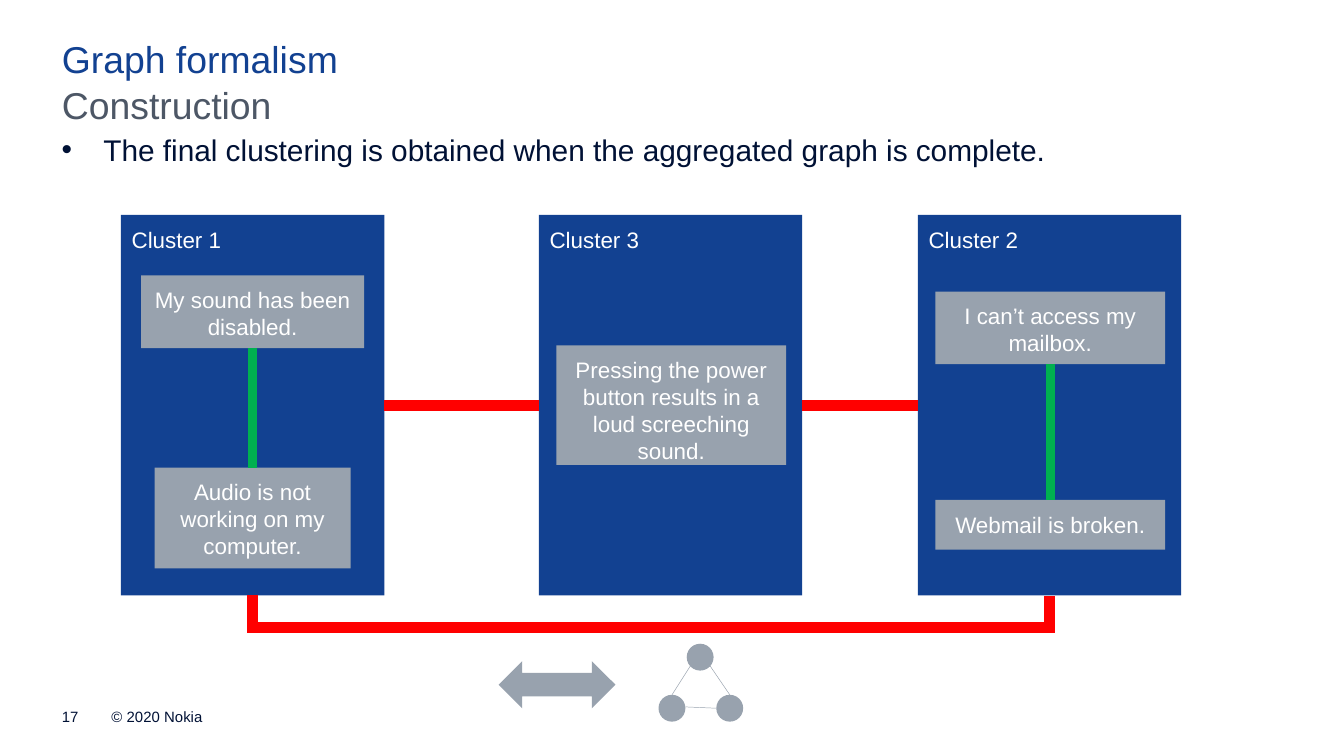
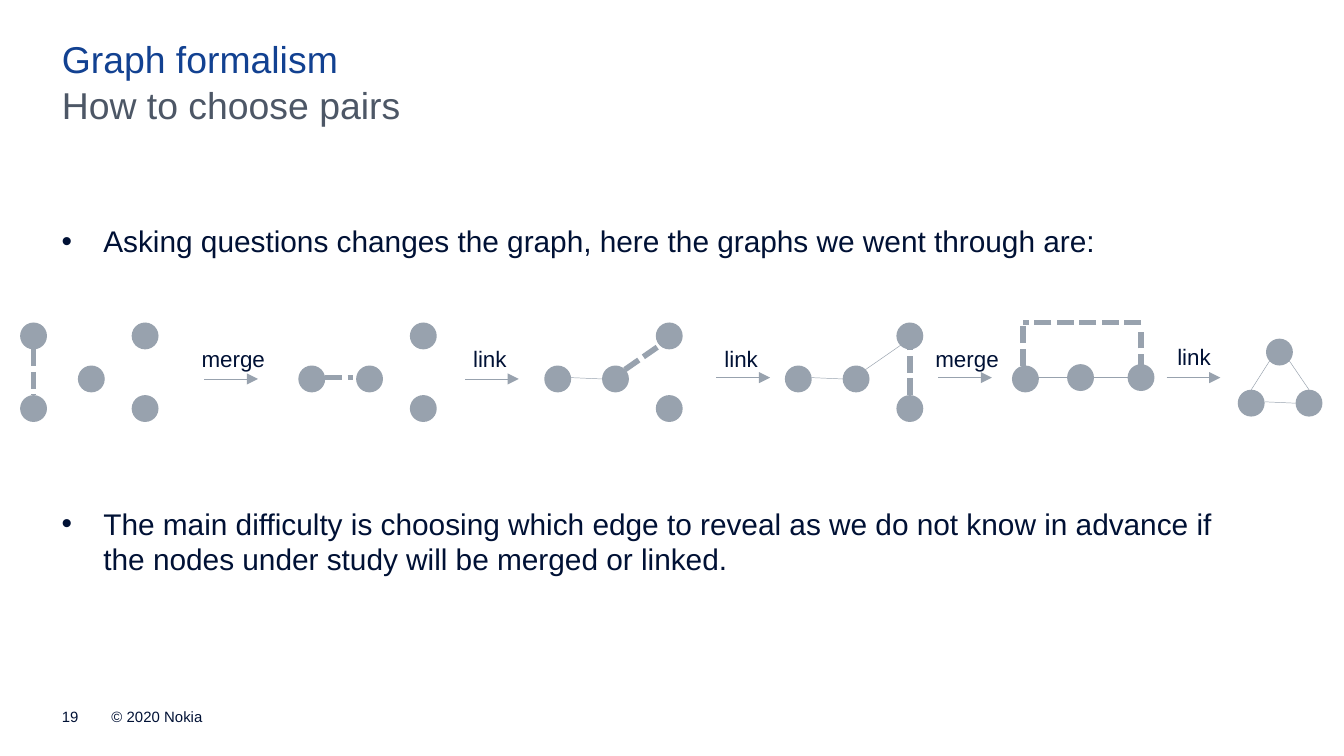
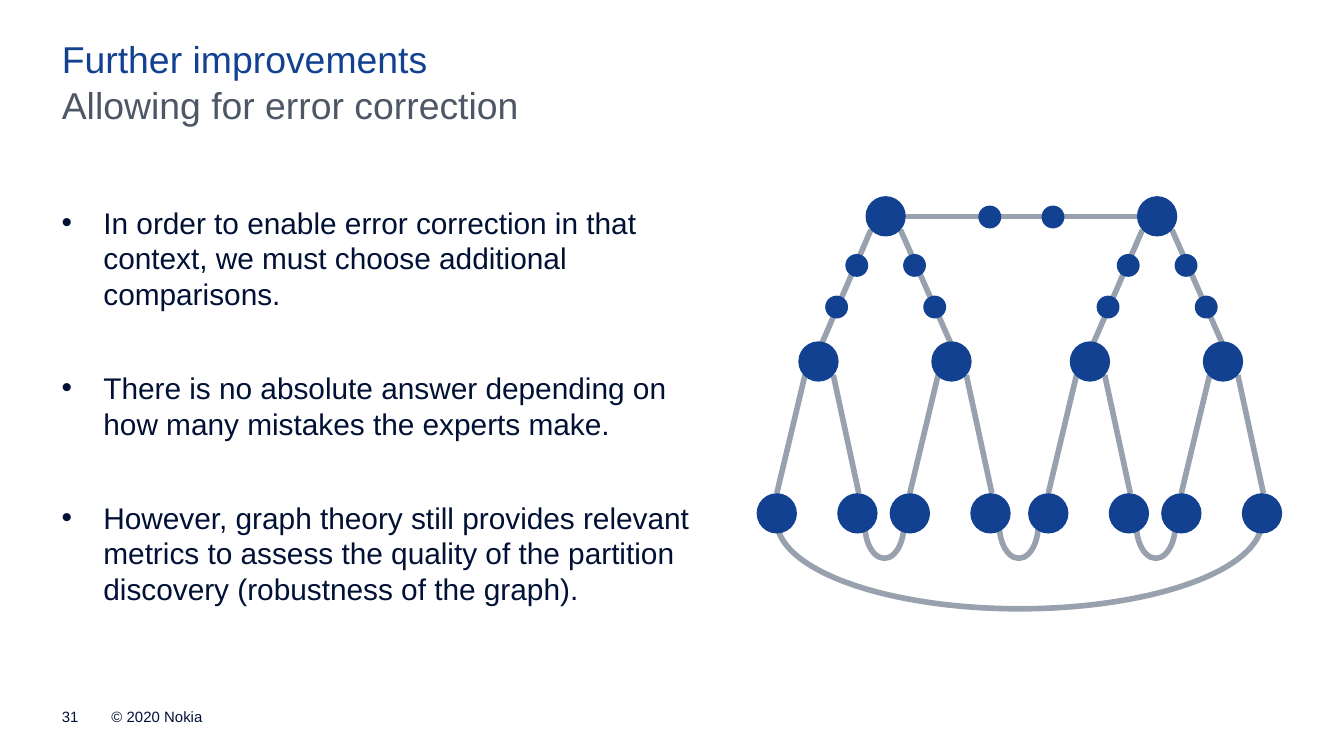
from dataclasses import dataclass

from lxml import etree
from pptx import Presentation
from pptx import util as u
from pptx.dml.color import RGBColor
from pptx.enum import dml, shapes, text
from pptx.oxml.ns import qn


@dataclass(frozen=True)
class Theme:
    font: str = "Arial"
    navy: str = "001135"
    blue: str = "124191"
    slate: str = "4D5766"
    grey: str = "98A2AE"
    white: str = "FFFFFF"
    link: str = "FF0000"
    merge: str = "00B050"
    title_size: float = 20
    body_size: float = 16
    label_size: float = 12
    footer_size: float = 8
    hairline: float = 0.25
    edge: float = 3
    merge_width: float = 4.5
    link_width: float = 6


THEME = Theme()
NODE = 0.2
CLUSTER_NODE = 0.3
MIDPOINT = 0.17
BOTTOM, TOP, LEFT, RIGHT = 2, 0, 1, 3


def add_bullet(paragraph, indent=0.31):
    properties = paragraph._p.get_or_add_pPr()
    properties.set("marL", str(u.Inches(indent)))
    properties.set("indent", str(u.Inches(-indent)))
    etree.SubElement(properties, qn("a:buFont")).set("typeface", THEME.font)
    etree.SubElement(properties, qn("a:buChar")).set("char", "•")


def write_text(frame, content, size, color, inset=0, align=text.PP_ALIGN.LEFT,
               anchor=text.MSO_ANCHOR.TOP, wrap=True, after=0, gap=0,
               line_spacing=None, bullet=False):
    frame.word_wrap = wrap
    frame.auto_size = text.MSO_AUTO_SIZE.NONE
    frame.vertical_anchor = anchor
    frame.margin_left = frame.margin_right = u.Inches(inset)
    frame.margin_top = frame.margin_bottom = u.Inches(inset)
    lines = [content] if isinstance(content, str) else content
    for index, line in enumerate(lines):
        paragraph = frame.add_paragraph() if index else frame.paragraphs[0]
        paragraph.text = line
        if bullet:
            add_bullet(paragraph)
        paragraph.alignment = align
        paragraph.space_before = u.Pt(gap if index else 0)
        paragraph.space_after = u.Pt(after)
        if line_spacing:
            paragraph.line_spacing = line_spacing
        paragraph.font.name = THEME.font
        paragraph.font.size = u.Pt(size)
        paragraph.font.color.rgb = RGBColor.from_string(color)


class Deck:
    def __init__(self, theme):
        self.theme = theme
        self.presentation = Presentation()
        self.presentation.slide_width = u.Inches(10)
        self.presentation.slide_height = u.Inches(10 * 9 / 16)
        self.slide = None

    def start(self, title, subtitle, number):
        theme = self.theme
        self.slide = self.presentation.slides.add_slide(self.presentation.slide_layouts[5])
        heading = self.slide.shapes.title
        heading.left, heading.top = u.Inches(0.46), u.Inches(0.31)
        heading.width, heading.height = u.Inches(9.09), u.Inches(0.34)
        write_text(heading.text_frame, title, theme.title_size, theme.blue, line_spacing=0.9)
        self.words((0.46, 0.65, 9.09, 0.34), subtitle, theme.title_size, theme.slate,
                   line_spacing=0.9)
        for x, width, footer in ((0.83, 1.97, "© 2020 Nokia"), (0.46, 0.28, number)):
            self.words((x, 5.27, width, 0.13), footer, theme.footer_size, theme.navy,
                       anchor=text.MSO_ANCHOR.BOTTOM)

    def words(self, box, content, size, color, **style):
        holder = self.slide.shapes.add_textbox(*map(u.Inches, box))
        write_text(holder.text_frame, content, size, color, **style)

    def bullets(self, box, content, gap=0):
        self.words(box, content, self.theme.body_size, self.theme.navy,
                   bullet=True, after=6, gap=gap)

    def shape(self, kind, box, color):
        outline = self.slide.shapes.add_shape(kind, *map(u.Inches, box))
        outline.shadow.inherit = False
        outline.fill.solid()
        outline.fill.fore_color.rgb = RGBColor.from_string(color)
        outline.line.fill.background()
        return outline

    def panel(self, box, content, color, align=text.PP_ALIGN.CENTER):
        panel = self.shape(shapes.MSO_SHAPE.RECTANGLE, box, color)
        write_text(panel.text_frame, content, self.theme.label_size, self.theme.white,
                   inset=0.08, align=align, after=3)
        return panel

    def node(self, x, y, size=NODE, color=THEME.grey):
        self.shape(shapes.MSO_SHAPE.OVAL, (x, y, size, size), color)

    def arc(self, box):
        curve = self.shape(shapes.MSO_SHAPE.ARC, box, self.theme.grey)
        curve.fill.background()
        curve.line.color.rgb = RGBColor.from_string(self.theme.grey)
        curve.line.width = u.Pt(self.theme.edge)
        curve.rotation = 90
        curve.adjustments[0] = 162
        curve.adjustments[1] = 53.55

    def edge(self, start, end, width=THEME.hairline, color=THEME.grey, dashed=False,
             arrow=False, kind=shapes.MSO_CONNECTOR.STRAIGHT):
        connector = self.slide.shapes.add_connector(kind, *map(u.Inches, (*start, *end)))
        connector.line.color.rgb = RGBColor.from_string(color)
        connector.line.width = u.Pt(width)
        if dashed:
            connector.line.dash_style = dml.MSO_LINE.SQUARE_DOT
        properties = connector._element.spPr
        if arrow:
            etree.SubElement(properties.find(qn("a:ln")), qn("a:tailEnd")).set("type", "triangle")
        etree.SubElement(properties, qn("a:effectLst"))
        return connector

    def dash(self, start, end):
        self.edge(start, end, self.theme.edge, dashed=True)

    def join(self, first, first_side, second, second_side, width, color):
        connector = self.edge((0, 0), (1, 1), width, color)
        connector.begin_connect(first, first_side)
        connector.end_connect(second, second_side)

    def detour(self, left, right, y, drop, width, color):
        middle, half, thin = (left + right) / 2, (right - left) / 2, 0.01
        connector = self.edge((middle - thin / 2, y - half), (middle + thin / 2, y + half),
                              width, color, kind=shapes.MSO_CONNECTOR.ELBOW)
        properties = connector._element.spPr
        transform = properties.find(qn("a:xfrm"))
        transform.set("rot", str(270 * 60000))
        transform.set("flipH", "1")
        etree.SubElement(properties.find(qn("a:ln")), qn("a:miter")).set("lim", "800000")
        geometry = properties.find(qn("a:prstGeom"))
        values = geometry.find(qn("a:avLst"))
        if values is None:
            values = etree.SubElement(geometry, qn("a:avLst"))
        guide = etree.SubElement(values, qn("a:gd"))
        guide.set("name", "adj1")
        guide.set("fmla", f"val {round(drop / thin * 100000)}")

    def complete_graph(self, x, y):
        for dx, dy in ((0, 0.38), (0.43, 0.38), (0.21, 0)):
            self.node(x + dx, y + dy)
        for x1, y1, x2, y2 in ((0.2, 0.47, 0.43, 0.48), (0.38, 0.16, 0.53, 0.38),
                               (0.24, 0.16, 0.1, 0.38)):
            self.edge((x + x1, y + y1), (x + x2, y + y2))


def construction(deck):
    theme = deck.theme
    deck.start("Graph formalism", "Construction", "17")
    deck.bullets((0.46, 0.98, 8.63, 4.13),
                 "The final clustering is obtained when the aggregated graph is complete.")
    cluster_1, cluster_3, cluster_2 = [
        deck.panel((x, 1.6, 1.96, 2.83), name, theme.blue, text.PP_ALIGN.LEFT)
        for x, name in ((0.9, "Cluster 1"), (4.01, "Cluster 3"), (6.83, "Cluster 2"))]
    sound, audio, power, mailbox, webmail = [
        deck.panel(box, ticket, theme.grey) for box, ticket in (
            ((1.05, 2.05, 1.66, 0.54), "My sound has been disabled."),
            ((1.15, 3.48, 1.46, 0.75), "Audio is not working on my computer."),
            ((4.14, 2.57, 1.71, 0.89),
             "Pressing the power button results in a loud screeching sound."),
            ((6.96, 2.17, 1.71, 0.54), "I can’t access my mailbox."),
            ((6.96, 3.72, 1.71, 0.37), "Webmail is broken."))]
    for upper, lower in ((sound, audio), (mailbox, webmail)):
        deck.join(upper, BOTTOM, lower, TOP, theme.merge_width, theme.merge)
    for before, following in ((cluster_1, cluster_3), (cluster_3, cluster_2)):
        deck.join(before, RIGHT, following, LEFT, theme.link_width, theme.link)
    deck.detour(1.88, 7.81, 4.43, 0.25, theme.link_width, theme.link)
    deck.shape(shapes.MSO_SHAPE.LEFT_RIGHT_ARROW, (3.71, 4.92, 0.87, 0.35), theme.grey)
    deck.complete_graph(4.9, 4.79)


def choosing_pairs(deck):
    theme = deck.theme
    deck.start("Graph formalism", "How to choose pairs", "19")
    deck.bullets((0.46, 1.66, 8.63, 3.32), (
        "Asking questions changes the graph, here the graphs we went through are:",
        "The main difficulty is choosing which edge to reveal as we do not know in advance "
        "if the nodes under study will be merged or linked."), gap=126)

    high, middle, low = 2.4, 2.72, 2.94
    right_nodes = ((0.43, middle), (0.83, high), (0.83, low))
    start_nodes = ((0, high), (0, low), *right_nodes)
    merged_nodes = ((0, middle), *right_nodes)
    row_nodes = ((0, middle), (0.41, 2.71), (0.86, 2.71))
    for left, nodes in ((0.15, start_nodes), (2.22, merged_nodes), (4.05, merged_nodes),
                        (5.84, merged_nodes), (7.53, row_nodes)):
        for dx, y in nodes:
            deck.node(left + dx, y)
    deck.complete_graph(9.21, 2.52)

    for start, end in (((4.25, 2.81), (4.48, 2.82)), ((6.04, 2.81), (6.27, 2.82)),
                       ((6.7, 2.57), (6.44, 2.75)), ((7.72, 2.81), (7.94, 2.81)),
                       ((8.39, 2.81), (8.14, 2.81))):
        deck.edge(start, end)
    for start, end in (((0.25, 2.6), (0.25, 2.94)), ((2.42, 2.81), (2.63, 2.81)),
                       ((4.65, 2.75), (4.91, 2.57)), ((6.77, 2.94), (6.77, 2.6)),
                       ((7.61, 2.72), (7.61, 2.4)), ((8.49, 2.4), (7.61, 2.4)),
                       ((8.49, 2.76), (8.49, 2.44))):
        deck.dash(start, end)
    for arrow_x, arrow_y, label_x, label_y, action in (
            (1.52, 2.82, 1.42, 2.49, "merge"), (3.46, 2.82, 3.44, 2.49, "link"),
            (5.33, 2.81, 5.31, 2.49, "link"), (6.98, 2.81, 6.88, 2.49, "merge"),
            (8.68, 2.81, 8.68, 2.47, "link")):
        deck.edge((arrow_x, arrow_y), (arrow_x + 0.4, arrow_y), arrow=True)
        deck.words((label_x, label_y, 0.6, 0.33), action, theme.label_size, theme.navy,
                   inset=0.08, wrap=False, after=3)


def error_correction(deck):
    theme = deck.theme
    deck.start("Further improvements", "Allowing for error correction", "31")
    deck.bullets((0.46, 1.52, 4.74, 3.58), (
        "In order to enable error correction in that context, we must choose additional "
        "comparisons.",
        "There is no absolute answer depending on how many mistakes the experts make.",
        "However, graph theory still provides relevant metrics to assess the quality of "
        "the partition discovery (robustness of the graph)."), gap=25)

    for x in (6.33, 7.33, 8.35):
        deck.arc((x, 3.76, 0.5, 0.29))
    deck.arc((6.93, 2.07, 1.31, 3.61))

    root_y, branch_y, leaf_y = 1.46, 2.54, 3.67
    roots = (6.44, 8.46)
    branches = [root + dx for root in roots for dx in (-0.5, 0.49)]
    leaves = [branch + dx for branch in branches for dx in (-0.31, 0.29)]
    deck.edge((6.74, 1.61), (8.46, 1.61), theme.edge)
    for parents, y, spans in ((roots, root_y, ((0.04, -0.34), (0.26, 0.65))),
                              (branches, branch_y, ((0.05, -0.16), (0.26, 0.45)))):
        for x in parents:
            for start_dx, end_dx in spans:
                deck.edge((x + start_dx, y + 0.25), (x + end_dx, y + 1.13), theme.edge)
    for level, y in ((roots, root_y), (branches, branch_y), (leaves, leaf_y)):
        for x in level:
            deck.node(x, y, CLUSTER_NODE, theme.blue)
    for root in roots:
        for dx, dy in ((-0.15, 0.43), (-0.3, 0.74), (0.28, 0.43), (0.43, 0.74)):
            deck.node(root + dx, root_y + dy, MIDPOINT, theme.blue)
    for x in (7.28, 7.75):
        deck.node(x, 1.53, MIDPOINT, theme.blue)


def main():
    deck = Deck(THEME)
    construction(deck)
    choosing_pairs(deck)
    error_correction(deck)
    deck.presentation.save("out.pptx")


if __name__ == "__main__":
    main()
